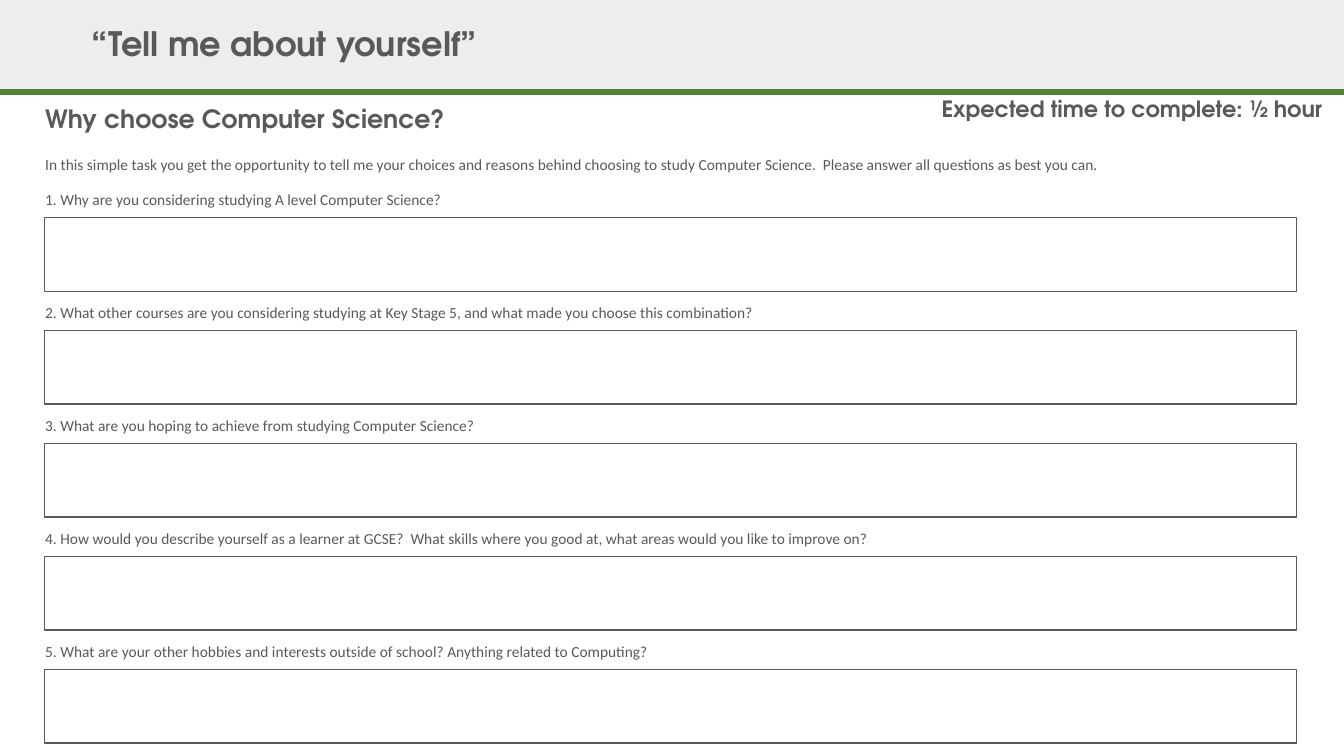
from pptx import Presentation
from pptx import util as u
from pptx.dml.color import RGBColor
from pptx.enum import shapes, text
from pptx.oxml.ns import qn
from lxml import etree

GREY = "595959"
HEADING = {"name": "TeX Gyre Adventor", "bold": True}
BODY = {"name": "Calibri", "size": u.Pt(11)}
QUESTIONS = [
    "Why are you considering studying A level Computer Science?",
    "What other courses are you considering studying at Key Stage 5, and what made you choose this combination?",
    "What are you hoping to achieve from studying Computer Science?",
    "How would you describe yourself as a learner at GCSE?  What skills where you good at, what areas would you like to improve on?",
    "What are your other hobbies and interests outside of school? Anything related to Computing?",
]


def rgb(value):
    return RGBColor.from_string(value)


def inches(*values):
    return [u.Inches(v) for v in values]


def set_all(obj, values):
    for key, value in values.items():
        setattr(obj, key, value)


def write(sp, content, font, frame=None, para=None):
    tf = sp.text_frame
    set_all(tf, {"word_wrap": True, **(frame or {})})
    p = tf.paragraphs[0]
    set_all(p, para or {})
    r = p.add_run()
    r.text = content
    set_all(r.font, font)
    r.font.color.rgb = rgb(GREY)


def add_text(parent, box, content, font, frame=None, para=None):
    sp = parent.add_textbox(*inches(*box))
    write(sp, content, font, frame, para)


def add_rect(parent, box, fill=None, line=None):
    sp = parent.add_shape(shapes.MSO_SHAPE.RECTANGLE, *inches(*box))
    sp.shadow.inherit = False
    if fill:
        sp.fill.solid()
        sp.fill.fore_color.rgb = rgb(fill)
    else:
        sp.fill.background()
    if line:
        sp.line.color.rgb = rgb(line)
        sp.line.width = u.Pt(1)
    else:
        sp.line.fill.background()


def add_rule(s, y, color, width):
    ln = s.shapes.add_connector(
        shapes.MSO_CONNECTOR.STRAIGHT, *inches(0, y, 13.33, y))
    ln.line.color.rgb = rgb(color)
    ln.line.width = u.Pt(width)
    etree.SubElement(ln._element.spPr, qn("a:effectLst"))


def add_title(s, box, content):
    sp = s.shapes.title
    set_all(sp, dict(zip(("left", "top", "width", "height"), inches(*box))))
    write(sp, content, {**HEADING, "size": u.Pt(24)},
          {"vertical_anchor": text.MSO_ANCHOR.MIDDLE,
           "auto_size": text.MSO_AUTO_SIZE.NONE},
          {"line_spacing": 0.9, "alignment": text.PP_ALIGN.LEFT})
    s.shapes._spTree.append(sp._element)


def add_question(s, number, question):
    top = 2.16 + 1.12 * (number - 1)
    group = s.shapes.add_group_shape().shapes
    add_rect(group, (0.44, top, 12.42, 0.73), line=GREY)
    add_text(group, (0.35, top - 0.32, 10.54, 0.29), f"{number}. {question}", BODY)


def main():
    prs = Presentation()
    prs.slide_width, prs.slide_height = inches(13.33, 7.5)
    s = prs.slides.add_slide(prs.slide_layouts[5])
    add_rect(s.shapes, (0, 0, 13.33, 0.91), fill="EDEDED")
    add_rule(s, 0.91, "538135", 4.5)
    add_title(s, (0.81, 0.09, 10.31, 0.73), "“Tell me about yourself”")
    add_text(s.shapes, (9.24, 0.93, 4.09, 0.4), "Expected time to complete: ½ hour",
             {**HEADING, "size": u.Pt(16)},
             para={"line_spacing": 0.9, "space_before": u.Pt(10)})
    add_text(s.shapes, (0.35, 0.99, 4.17, 0.4), "Why choose Computer Science?",
             {**HEADING, "size": u.Pt(18)},
             {"vertical_anchor": text.MSO_ANCHOR.MIDDLE}, {"line_spacing": 0.9})
    add_text(s.shapes, (0.35, 1.49, 10.7, 0.29),
             "In this simple task you get the opportunity to tell me your choices and "
             "reasons behind choosing to study Computer Science.  "
             "Please answer all questions as best you can.",
             BODY, {"word_wrap": False})
    for number, question in enumerate(QUESTIONS, 1):
        add_question(s, number, question)
    prs.save("out.pptx")


if __name__ == "__main__":
    main()
